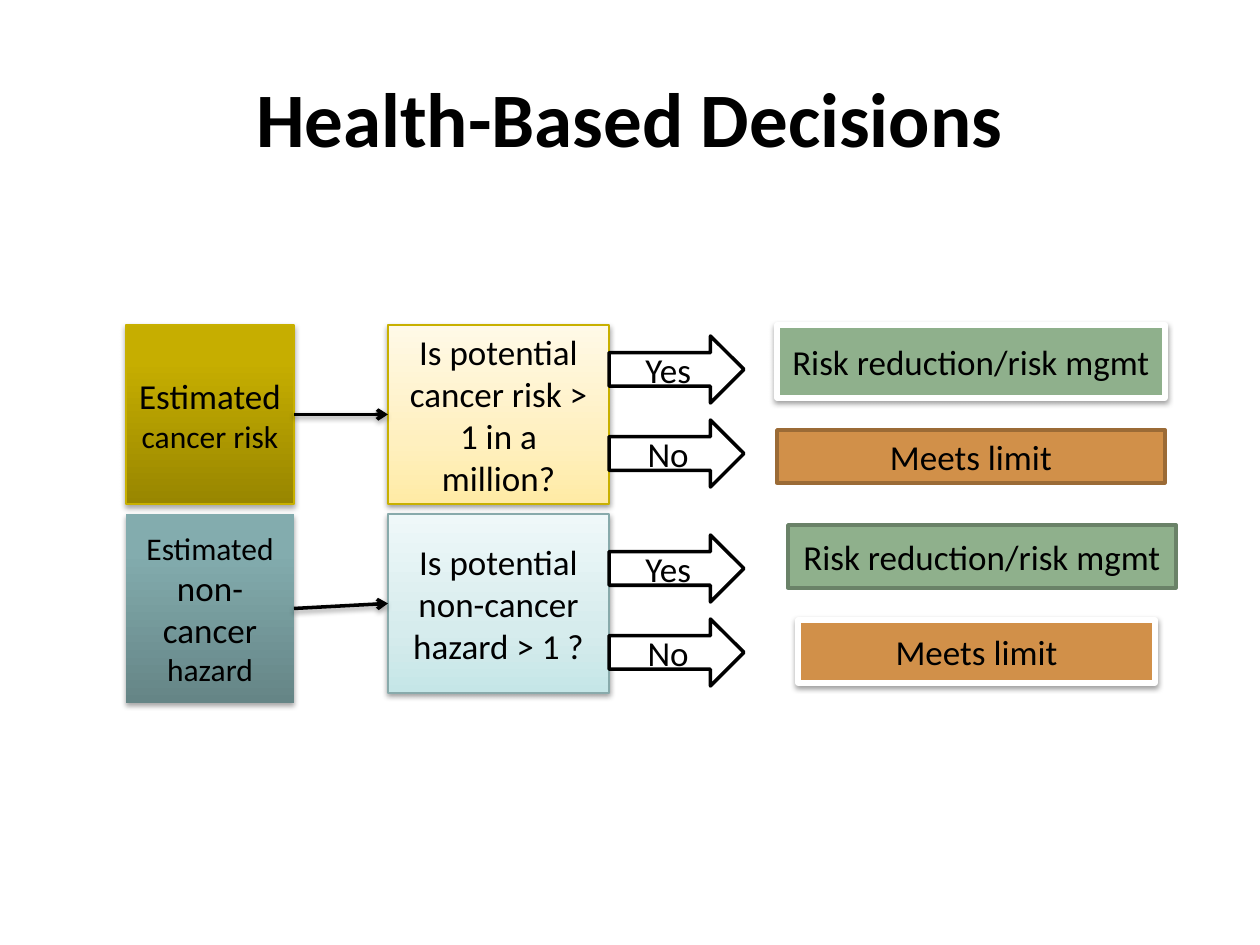
from copy import deepcopy

from lxml import etree
from pptx import Presentation
from pptx.dml.color import RGBColor
from pptx.enum.shapes import MSO_CONNECTOR, MSO_SHAPE
from pptx.enum.text import MSO_ANCHOR, PP_ALIGN
from pptx.oxml.ns import qn
from pptx.util import Emu, Pt

RECTANGLE = MSO_SHAPE.RECTANGLE
RIGHT_ARROW = MSO_SHAPE.RIGHT_ARROW
STRAIGHT = MSO_CONNECTOR.STRAIGHT
CENTER = PP_ALIGN.CENTER
MIDDLE = MSO_ANCHOR.MIDDLE
LEFT_SIDE, RIGHT_SIDE = 1, 3

PX_PER_INCH = 126
FONT = "Calibri"
BLACK, WHITE = "000000", "FFFFFF"
GREEN, ORANGE = "8FB08C", "D19049"
STRONG_SHADOW = (23000, 35)  # distance in EMU, opacity in percent
SOFT_SHADOW = (20000, 38)

TITLE = "Health-Based Decisions"
TITLE_BOX = (63, 38, 1134, 157)

# Text is a list of (words, size); gradients run from bottom to top.
ROWS = [
    {
        "estimate": {
            "box": (126, 325, 168, 179),
            "text": [("Estimated", 20), (" cancer risk", 18)],
            "fill": [(0, "988600"), (80, "C6AE00"), (100, "C7AF00")],
            "line": ("C8B000", 0.75),
            "shadow": STRONG_SHADOW,
        },
        "question": {
            "box": (388, 325, 221, 179),
            "text": [("Is potential cancer risk > 1 in a million?", 20)],
            "fill": [(0, "FFEBA5"), (35, "FFF0BF"), (100, "FFF9E7")],
            "line": ("C8B000", 0.75),
            "shadow": SOFT_SHADOW,
        },
        "answers_top": 336,
        "outcomes": [
            ("Risk reduction/risk mgmt", (777, 325, 388, 73), GREEN, (WHITE, 3), SOFT_SHADOW),
            ("Meets limit", (777, 430, 388, 53), ORANGE, ("9B6B36", 2), None),
        ],
    },
    {
        "estimate": {
            "box": (126, 514, 168, 189),
            "text": [("Estimated ", 18), ("non-cancer", 20), (" hazard", 18)],
            "fill": [(0, "658586"), (80, "83ACAE"), (100, "82AEAF")],
            "line": None,
            "shadow": STRONG_SHADOW,
        },
        "question": {
            "box": (388, 514, 221, 179),
            "text": [("Is potential non-cancer hazard > 1 ?", 20)],
            "fill": [(0, "C5E6E7"), (35, "D6ECED"), (100, "EFF8F9")],
            "line": ("88AAAB", 0.75),
            "shadow": SOFT_SHADOW,
        },
        "answers_top": 535,
        "outcomes": [
            ("Risk reduction/risk mgmt", (788, 525, 388, 63), GREEN, ("6A8268", 2), None),
            ("Meets limit", (798, 620, 357, 63), ORANGE, (WHITE, 3), SOFT_SHADOW),
        ],
    },
]
ANSWERS = ["Yes", "No"]
ANSWER_LEFT, ANSWER_WIDTH, ANSWER_HEIGHT, ANSWER_STEP = 609, 135, 67, 84


def px(length):
    return Emu(round(length * 914400 / PX_PER_INCH))


def color(hex_string):
    return RGBColor.from_string(hex_string)


def set_line(line, style):
    if style is None:
        line.fill.background()
        return
    line.color.rgb = color(style[0])
    line.width = Pt(style[1])


def set_fill(shape, fill):
    """Fill with one colour, or with a list of (percent, colour) stops."""
    if isinstance(fill, str):
        shape.fill.solid()
        shape.fill.fore_color.rgb = color(fill)
        return
    shape.fill.gradient()
    shape.fill.gradient_angle = 90
    stop_list = shape._element.spPr.find(".//" + qn("a:gsLst"))
    while len(stop_list) < len(fill):
        stop_list.append(deepcopy(stop_list[0]))
    for stop, (percent, hex_string) in zip(shape.fill.gradient_stops, fill):
        stop.position = percent / 100
        stop.color.rgb = color(hex_string)


def add_shadow(effects, style):
    """Put a downward shadow in an a:effectLst element."""
    distance, opacity = style
    shadow = etree.SubElement(
        effects, qn("a:outerShdw"), blurRad="40000", dist=str(distance),
        dir="5400000", rotWithShape="0")
    shade = etree.SubElement(shadow, qn("a:srgbClr"), val=BLACK)
    etree.SubElement(shade, qn("a:alpha"), val=str(opacity * 1000))


def write_text(shape, text):
    shape.text_frame.word_wrap = True
    shape.text_frame.vertical_anchor = MIDDLE
    paragraph = shape.text_frame.paragraphs[0]
    paragraph.alignment = CENTER
    paragraph.font.name = FONT
    paragraph.font.color.rgb = color(BLACK)
    for words, size in text:
        run = paragraph.add_run()
        run.text = words
        run.font.size = Pt(size)
    return paragraph


def add_box(slide, box, text, fill, line, shadow=None, kind=RECTANGLE):
    shape = slide.shapes.add_shape(kind, *map(px, box))
    set_fill(shape, fill)
    set_line(shape.line, line)
    shape.shadow.inherit = False
    if shadow:
        add_shadow(shape._element.spPr.find(qn("a:effectLst")), shadow)
    write_text(shape, text)
    return shape


def connect(slide, start, end):
    connector = slide.shapes.add_connector(STRAIGHT, 0, 0, 0, 0)
    connector.begin_connect(start, RIGHT_SIDE)
    connector.end_connect(end, LEFT_SIDE)
    set_line(connector.line, (BLACK, 2))
    properties = connector._element.spPr
    etree.SubElement(properties.find(qn("a:ln")), qn("a:tailEnd"), type="arrow")
    add_shadow(etree.SubElement(properties, qn("a:effectLst")), SOFT_SHADOW)


def add_row(slide, row):
    estimate = add_box(slide, **row["estimate"])
    question = add_box(slide, **row["question"])
    connect(slide, estimate, question)
    for index, answer in enumerate(ANSWERS):
        top = row["answers_top"] + index * ANSWER_STEP
        add_box(slide, (ANSWER_LEFT, top, ANSWER_WIDTH, ANSWER_HEIGHT),
                [(answer, 20)], WHITE, (BLACK, 2), kind=RIGHT_ARROW)
    for words, box, fill, line, shadow in row["outcomes"]:
        add_box(slide, box, [(words, 20)], fill, line, shadow)


def main():
    presentation = Presentation()
    presentation.slide_width = px(1260)
    presentation.slide_height = px(945)
    slide = presentation.slides.add_slide(presentation.slide_layouts[6])
    title = slide.shapes.add_textbox(*map(px, TITLE_BOX))
    write_text(title, [(TITLE, 44)]).font.bold = True
    for row in ROWS:
        add_row(slide, row)
    presentation.save("out.pptx")


if __name__ == "__main__":
    main()
